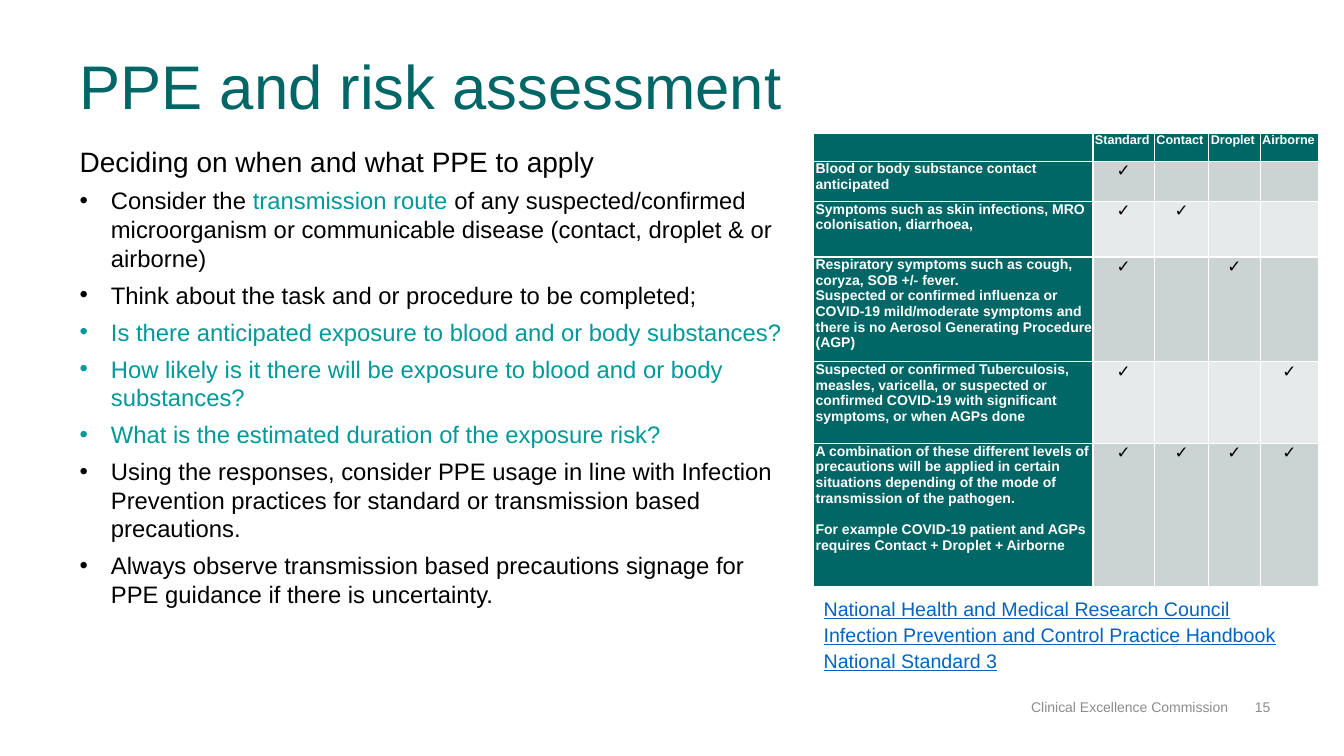
from pptx import Presentation
from pptx.dml.color import RGBColor
from pptx.enum.text import MSO_ANCHOR, MSO_AUTO_SIZE, PP_ALIGN
from pptx.oxml.ns import qn
from pptx.util import Inches, Pt
from lxml import etree

LEFT, CENTER, RIGHT = PP_ALIGN.LEFT, PP_ALIGN.CENTER, PP_ALIGN.RIGHT
TOP, BOTTOM = MSO_ANCHOR.TOP, MSO_ANCHOR.BOTTOM
FIXED = MSO_AUTO_SIZE.NONE

DEEP, TEAL, LINK = "006666", "009999", "0563C1"
BLACK, WHITE, GRAY = "000000", "FFFFFF", "8C8C8C"
BANDS = "CCD3D3", "E7EAEA"

HEADS = ["", "Standard", "Contact", "Droplet", "Airborne"]
WIDTHS = [2.77, 0.61, 0.54, 0.51, 0.58]
ROWS = [
    (0.4, ["Blood or body substance contact anticipated"], [1], 0),
    (0.55, ["Symptoms such as skin infections, MRO colonisation, diarrhoea,"], [1, 2], 0),
    (1.04, ["Respiratory symptoms such as cough, coryza, SOB +/- fever.",
            "Suspected or confirmed influenza or COVID-19 mild/moderate symptoms "
            "and there is no Aerosol Generating Procedure (AGP)"], [1, 3], 0),
    (0.81, ["Suspected or confirmed Tuberculosis, measles, varicella, or suspected or "
            "confirmed COVID-19 with significant symptoms, or when AGPs done"], [1, 4], 0),
    (1.42, ["A combination of these different levels of precautions will be applied in "
            "certain situations depending of the mode of transmission of the pathogen.",
            "For example COVID-19 patient and AGPs requires Contact + Droplet + Airborne"],
     [1, 2, 3, 4], 11.5),
]
POINTS = [
    [("Consider the ", BLACK), ("transmission route ", TEAL),
     ("of any suspected/confirmed microorganism or communicable disease "
      "(contact, droplet & or airborne)", BLACK)],
    [("Think about the task and or procedure to be completed;", BLACK)],
    [("Is there anticipated exposure to blood and or body substances?", TEAL)],
    [("How likely is it there will be exposure to blood and or body substances?", TEAL)],
    [("What is the estimated duration of the exposure risk?", TEAL)],
    [("Using the responses, consider PPE usage in line with Infection Prevention "
      "practices for standard or transmission based precautions.", BLACK)],
    [("Always observe transmission based precautions signage for PPE guidance "
      "if there is uncertainty.", BLACK)],
]
SOURCES = ["National Health and Medical Research Council",
           "Infection Prevention and Control Practice Handbook National Standard 3"]


def paint(code):
    return RGBColor.from_string(code)


def write(para, text, size=10, color=BLACK, bold=False, under=False):
    run = para.add_run()
    run.text = text
    font = run.font
    font.name, font.size = "Arial", Pt(size)
    font.bold, font.underline = bold, under
    font.color.rgb = paint(color)


class Page:
    def __init__(self, deck):
        self.slide = deck.slides.add_slide(deck.slide_layouts[1])

    def place(self, shape, box, anchor=TOP, inset=(0, 0)):
        shape.left, shape.top, shape.width, shape.height = map(Inches, box)
        frame = shape.text_frame
        frame.word_wrap, frame.auto_size = True, FIXED
        frame.vertical_anchor = anchor
        frame.margin_left = frame.margin_right = Inches(inset[0])
        frame.margin_top = frame.margin_bottom = Inches(inset[1])
        return frame

    def para(self, frame, first, align=LEFT, before=0, after=0, line=1.0):
        para = frame.paragraphs[0] if first else frame.add_paragraph()
        para.alignment, para.line_spacing = align, line
        para.space_before, para.space_after = Pt(before), Pt(after)
        return para

    def bullet(self, para, color=None):
        props = para._p.get_or_add_pPr()
        indent = Inches(0.31) if color else 0
        props.set("marL", str(indent))
        props.set("indent", str(-indent))
        if color:
            tint = etree.SubElement(props, qn("a:buClr"))
            etree.SubElement(tint, qn("a:srgbClr"), val=color)
            etree.SubElement(props, qn("a:buFont"), typeface="Arial")
            etree.SubElement(props, qn("a:buChar"), char="•")
        else:
            etree.SubElement(props, qn("a:buNone"))

    def title(self, text, box):
        frame = self.place(self.slide.shapes.title, box, BOTTOM)
        write(self.para(frame, True, line=0.9), text, size=44, color=DEEP)

    def body(self, lead, points, box):
        frame = self.place(self.slide.placeholders[1], box)
        para = self.para(frame, True, after=6)
        self.bullet(para)
        write(para, lead, size=20)
        for parts in points:
            para = self.para(frame, False, after=6)
            self.bullet(para, parts[0][1])
            for text, color in parts:
                write(para, text, size=17, color=color)

    def label(self, lines, box, anchor=TOP, inset=(0, 0), align=LEFT, line=1.0, **style):
        frame = self.place(self.slide.shapes.add_textbox(0, 0, 0, 0), box, anchor, inset)
        for i, text in enumerate(lines):
            write(self.para(frame, i == 0, align, line=line), text, **style)

    def cell(self, cell, lines, fill, align=LEFT, gap=0, inset=0.02, **style):
        cell.fill.solid()
        cell.fill.fore_color.rgb = paint(fill)
        cell.margin_left, cell.margin_right = Inches(inset), 0
        cell.margin_top = cell.margin_bottom = 0
        for i, text in enumerate(lines):
            para = self.para(cell.text_frame, i == 0, align, before=gap if i else 0)
            write(para, text, **style)

    def table(self, box):
        frame = self.slide.shapes.add_table(len(ROWS) + 1, len(HEADS), *map(Inches, box))
        grid = frame.table
        for col, width in zip(grid.columns, WIDTHS):
            col.width = Inches(width)
        grid.rows[0].height = Inches(0.25)
        for c, head in enumerate(HEADS):
            self.cell(grid.cell(0, c), [head], DEEP, size=9, color=WHITE, bold=True)
        for r, (height, lines, ticks, gap) in enumerate(ROWS, 1):
            grid.rows[r].height = Inches(height)
            self.cell(grid.cell(r, 0), lines, DEEP, gap=gap, color=WHITE, bold=True)
            for c in range(1, len(HEADS)):
                mark = "✓" if c in ticks else ""
                self.cell(grid.cell(r, c), [mark], BANDS[(r - 1) % 2], CENTER,
                          inset=0, size=12)


def main():
    deck = Presentation()
    deck.slide_width, deck.slide_height = Inches(13.33), Inches(7.5)
    page = Page(deck)
    page.title("PPE and risk assessment", (0.79, 0.47, 8.02, 0.75))
    page.body("Deciding on when and what PPE to apply", POINTS, (0.79, 1.43, 7.01, 4.7))
    page.table((8.07, 1.32, 5.01, 4.47))
    page.label(SOURCES, (8.07, 5.85, 5.01, 0.88), inset=(0.1, 0.05), line=1.1,
               size=14, color=LINK, under=True)
    for text, left, width in (("Clinical Excellence Commission", 7.68, 4.5),
                              ("15", 12.18, 0.42)):
        page.label([text], (left, 6.7, width, 0.4), BOTTOM, align=RIGHT, color=GRAY)
    deck.save("out.pptx")


if __name__ == "__main__":
    main()
